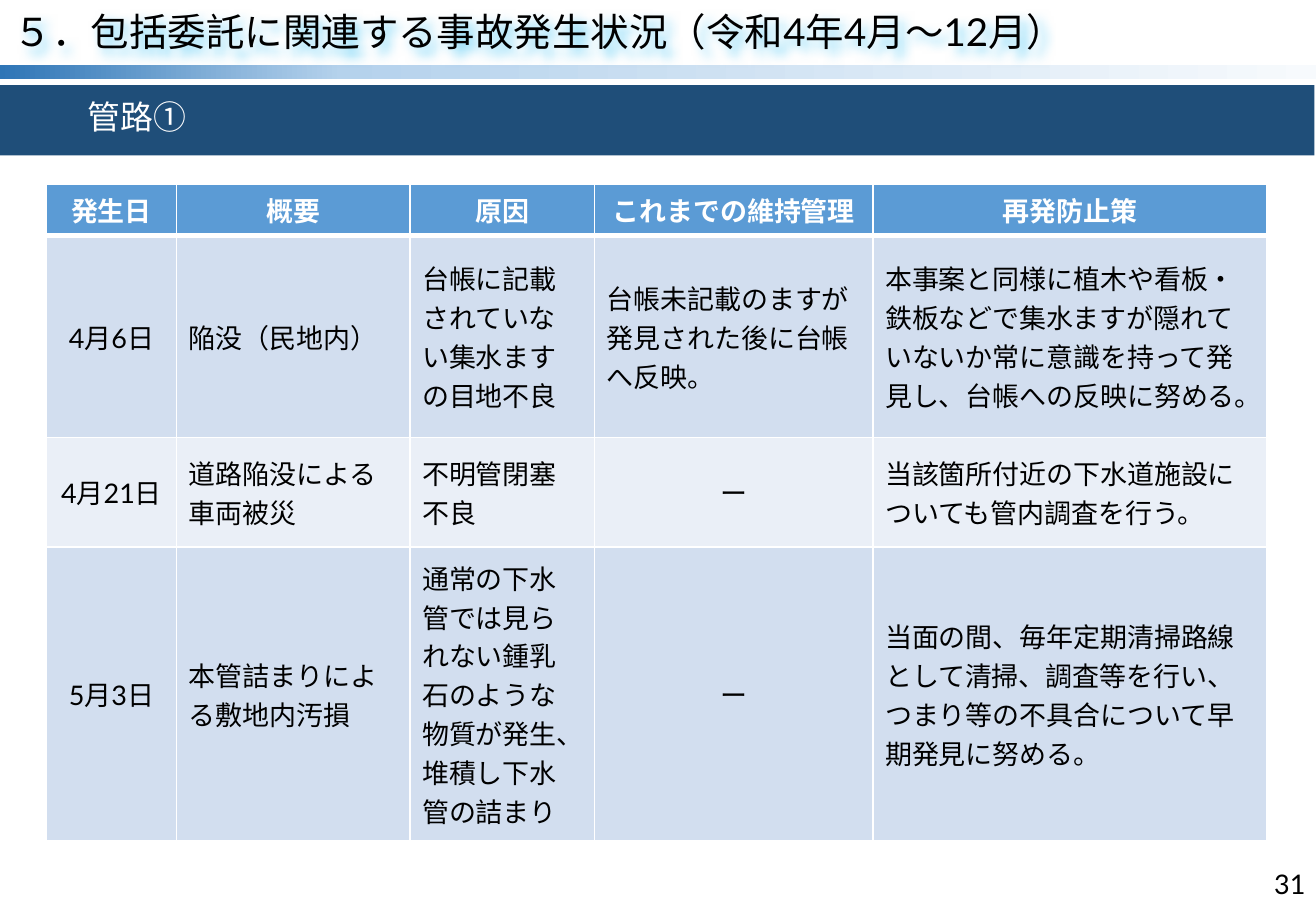
from pptx import Presentation, util as u
from pptx.dml.color import RGBColor
from pptx.enum import shapes, text
from pptx.oxml import parse_xml
from pptx.oxml.ns import nsdecls, qn

TITLE = "５．包括委託に関連する事故発生状況（令和4年4月～12月）"
SECTION = "管路①"
PAGE_NUMBER = "31"
HEADINGS = ["発生日", "概要", "原因", "これまでの維持管理", "再発防止策"]
ACCIDENTS = [
    ("4月6日", "陥没（民地内）", "台帳に記載されていない集水ますの目地不良",
     "台帳未記載のますが発見された後に台帳へ反映。",
     "本事案と同様に植木や看板・鉄板などで集水ますが隠れていないか常に意識を持って発見し、台帳への反映に努める。"),
    ("4月21日", "道路陥没による車両被災", "不明管閉塞不良", "ー",
     "当該箇所付近の下水道施設についても管内調査を行う。"),
    ("5月3日", "本管詰まりによる敷地内汚損",
     "通常の下水管では見られない鍾乳石のような物質が発生、堆積し下水管の詰まり", "ー",
     "当面の間、毎年定期清掃路線として清掃、調査等を行い、つまり等の不具合について早期発見に努める。"),
]
COLUMN_WIDTHS = [2.72, 4.88, 3.86, 5.82, 8.23]
ROW_HEIGHTS = [1.02, 4.22, 2.29, 6.15]
BAND_STOPS = [(0, "2E75B6"), (26, "B5D2EC"), (100, "F7FAFD")]
HEADING_FILL = "5B9BD5"
ROW_FILLS = ["D2DEEF", "EAEFF7"]
WHITE, BLACK, NAVY = "FFFFFF", "000000", "1F4E79"
LATIN, JAPANESE = "Lato", "Noto Sans CJK JP"
SLIDE_WIDTH, SLIDE_HEIGHT = 27.51, 19.05


def paint(fill, color):
    fill.solid()
    fill.fore_color.rgb = RGBColor.from_string(color)


def write(frame, content, size, color, align=text.PP_ALIGN.LEFT, bold=False):
    frame.text = content
    frame.word_wrap = True
    paragraph = frame.paragraphs[0]
    paragraph.alignment = align
    font = paragraph.runs[0].font
    font.size, font.bold, font.name = u.Pt(size), bold, LATIN
    paint(font.fill, color)
    east_asian = parse_xml(f'<a:ea {nsdecls("a")} typeface="{JAPANESE}"/>')
    paragraph.runs[0]._r.rPr.find(qn("a:latin")).addnext(east_asian)
    return paragraph


def add_box(kind, left, top, width, height):
    box = slide.shapes.add_shape(kind, *map(u.Cm, (left, top, width, height)))
    box.shadow.inherit = False
    box.line.fill.background()
    return box


def set_borders(cell, bottom_width):
    properties = cell._tc.get_or_add_tcPr()
    widths = [("lnL", 1), ("lnR", 1), ("lnT", 1), ("lnB", bottom_width)]
    for position, (side, width) in enumerate(widths):
        properties.insert(position, parse_xml(
            f'<a:{side} {nsdecls("a")} w="{u.Pt(width)}"><a:solidFill>'
            f'<a:srgbClr val="{WHITE}"/></a:solidFill></a:{side}>'))


deck = Presentation()
deck.slide_width, deck.slide_height = u.Cm(SLIDE_WIDTH), u.Cm(SLIDE_HEIGHT)
slide = deck.slides.add_slide(deck.slide_layouts[6])

band = add_box(shapes.MSO_SHAPE.RECTANGLE, 0, 1.37, SLIDE_WIDTH, 0.28)
stops = "".join(f'<a:gs pos="{place * 1000}"><a:srgbClr val="{color}"/></a:gs>'
                for place, color in BAND_STOPS)
band._element.spPr.find(qn("a:prstGeom")).addnext(parse_xml(
    f'<a:gradFill {nsdecls("a")}><a:gsLst>{stops}</a:gsLst><a:lin ang="0"/></a:gradFill>'))

section = add_box(shapes.MSO_SHAPE.RECTANGLE, 0, 1.78, 27.48, 1.47)
paint(section.fill, NAVY)
section_frame = section.text_frame
section_frame.vertical_anchor = text.MSO_ANCHOR.MIDDLE
section_frame.margin_left = u.Cm(1.83)
section_frame.margin_top, section_frame.margin_bottom = u.Cm(0.25), u.Cm(0.41)
write(section_frame, SECTION, 19.5, WHITE)

rows = [HEADINGS, *ACCIDENTS]
table = slide.shapes.add_table(
    len(rows), len(HEADINGS), u.Cm(0.97), u.Cm(3.86),
    u.Cm(sum(COLUMN_WIDTHS)), u.Cm(sum(ROW_HEIGHTS))).table
for column, width in zip(table.columns, COLUMN_WIDTHS):
    column.width = u.Cm(width)
for r, (row, height) in enumerate(zip(rows, ROW_HEIGHTS)):
    table.rows[r].height = u.Cm(height)
    heading = r == 0
    for c, content in enumerate(row):
        cell = table.cell(r, c)
        cell.vertical_anchor = text.MSO_ANCHOR.MIDDLE
        centred = heading or c == 0 or content == "ー"
        write(cell.text_frame, content, 16, WHITE if heading else BLACK,
              text.PP_ALIGN.CENTER if centred else text.PP_ALIGN.LEFT, heading)
        paint(cell.fill, HEADING_FILL if heading else ROW_FILLS[(r - 1) % 2])
        set_borders(cell, 3 if heading else 1)

title = add_box(shapes.MSO_SHAPE.ROUNDED_RECTANGLE, 0.2, 0.28, 26.75, 0.94)
title.adjustments[0] = 0.04
title.fill.background()
title_frame = title.text_frame
title_frame.vertical_anchor = text.MSO_ANCHOR.TOP
title_frame.margin_left = title_frame.margin_right = u.Cm(0.08)
title_frame.margin_top = title_frame.margin_bottom = u.Cm(0.08)
write(title_frame, TITLE, 22.8, BLACK).line_spacing = u.Pt(21.9)
title._element.spPr.find(qn("a:effectLst")).append(parse_xml(
    f'<a:outerShdw {nsdecls("a")} blurRad="{u.Cm(0.2)}" dist="{u.Cm(0.14)}" dir="2700000">'
    '<a:srgbClr val="00B0F0"><a:alpha val="50000"/></a:srgbClr></a:outerShdw>'))

page = slide.shapes.add_textbox(u.Cm(21.34), u.Cm(17.96), u.Cm(6.2), u.Cm(1.02))
page.text_frame.vertical_anchor = text.MSO_ANCHOR.MIDDLE
write(page.text_frame, PAGE_NUMBER, 16, BLACK, text.PP_ALIGN.RIGHT)

deck.save("out.pptx")
